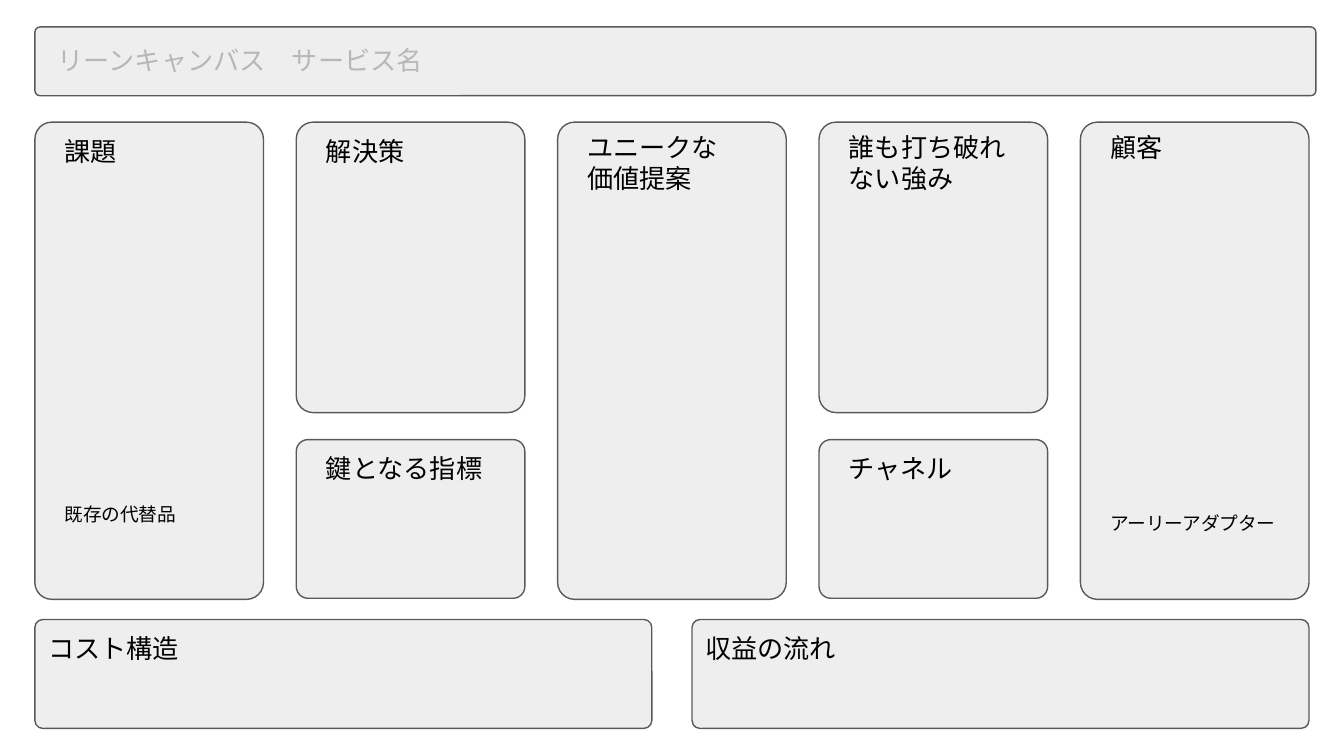
from pptx import Presentation
from pptx.dml.color import RGBColor
from pptx.enum.shapes import MSO_SHAPE
from pptx.enum.text import MSO_ANCHOR, MSO_AUTO_SIZE, PP_ALIGN
from pptx.util import Cm, Pt

COLORS = {"card": "EEEEEE", "edge": "595959", "text": "000000", "title": "B7B7B7"}
FONT = "Arial"

TITLE = "リーンキャンバス　サービス名"
# Cards: column, row span, heading, heading shift in cm
CARDS = [
    (0, "full", "課題", 0),
    (1, "upper", "解決策", 0),
    (1, "lower", "鍵となる指標", 0),
    (2, "full", "ユニークな\n価値提案", -0.08),
    (3, "upper", "誰も打ち破れない強み", -0.08),
    (3, "lower", "チャネル", 0),
    (4, "full", "顧客", -0.08),
]
# Notes: column, top in cm, text
NOTES = [(0, 9.25, "既存の代替品"), (4, 9.42, "アーリーアダプター")]
FOOTER = ["コスト構造", "収益の流れ"]

# All lengths in cm
LEFT, PITCH, WIDTH = 0.66, 4.94, 4.32
SPANS = {"full": (2.31, 9.02), "upper": (2.31, 5.49), "lower": (8.31, 3.0)}
HEADER = (LEFT, 0.51, 24.21, 1.3)
FOOT_TOP, FOOT_PITCH, FOOT_WIDTH, FOOT_HIGH = 11.71, 12.42, 11.66, 2.06
INDENT, TEXT_WIDTH, LINE_HIGH = 0.31, 3.71, 1.12

FRAME = {
    "word_wrap": True,
    "auto_size": MSO_AUTO_SIZE.NONE,
    "vertical_anchor": MSO_ANCHOR.TOP,
    "margin_left": Cm(0.25),
    "margin_right": Cm(0.25),
    "margin_top": Cm(0.25),
    "margin_bottom": Cm(0.25),
}


def color(name):
    return RGBColor.from_string(COLORS[name])


def add_card(slide, *box):
    card = slide.shapes.add_shape(MSO_SHAPE.ROUNDED_RECTANGLE, *map(Cm, box))
    card.adjustments[0] = 0.074
    card.shadow.inherit = False
    card.fill.solid()
    card.fill.fore_color.rgb = color("card")
    card.line.color.rgb = color("edge")
    card.line.width = Pt(0.75)


def write(shape, text, size=14, tint="text"):
    frame = shape.text_frame
    for key, value in FRAME.items():
        setattr(frame, key, value)
    frame.text = text
    for line in frame.paragraphs:
        line.alignment = PP_ALIGN.LEFT
        for key, value in {"name": FONT, "size": Pt(size)}.items():
            setattr(line.font, key, value)
        line.font.color.rgb = color(tint)


def add_label(slide, left, top, text, size=14):
    box = map(Cm, (left, top, TEXT_WIDTH, LINE_HIGH))
    write(slide.shapes.add_textbox(*box), text, size)


def add_title(slide):
    """Place the title in front of the header card."""
    title = slide.shapes.title
    place = {"left": 0.84, "top": 0.58, "width": 13.08, "height": LINE_HIGH}
    for key, value in place.items():
        setattr(title, key, Cm(value))
    write(title, TITLE, tint="title")
    slide.shapes.element.append(title.element)


def main():
    deck = Presentation()
    deck.slide_width, deck.slide_height = Cm(25.4), Cm(14.29)
    slide = deck.slides.add_slide(deck.slide_layouts[5])

    add_card(slide, *HEADER)
    add_title(slide)
    for col, span, text, shift in CARDS:
        left = LEFT + col * PITCH
        top, high = SPANS[span]
        add_card(slide, left, top, WIDTH, high)
        add_label(slide, left + INDENT, top + shift, text)
    for col, top, text in NOTES:
        add_label(slide, LEFT + col * PITCH + INDENT, top, text, 10)
    for i, text in enumerate(FOOTER):
        left = LEFT + i * FOOT_PITCH
        add_card(slide, left, FOOT_TOP, FOOT_WIDTH, FOOT_HIGH)
        add_label(slide, left, FOOT_TOP, text)

    deck.save("out.pptx")


if __name__ == "__main__":
    main()
